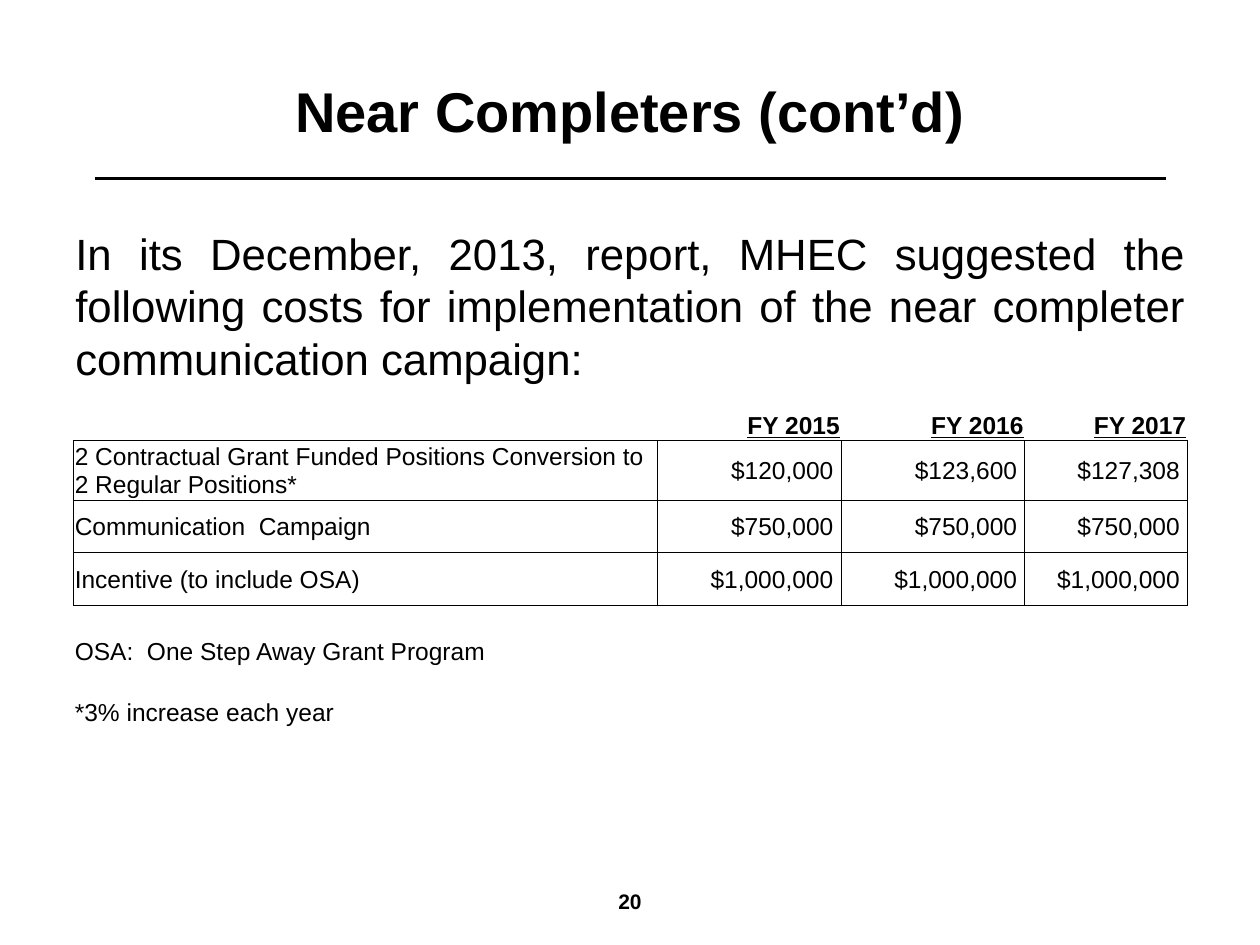
"""Build the Near Completers cost slide on a grid of 120 columns by 90 rows."""
from dataclasses import dataclass

from lxml.etree import SubElement
from pptx import Presentation
from pptx.dml.color import RGBColor
from pptx.enum.shapes import MSO_CONNECTOR as Connector
from pptx.enum.text import MSO_ANCHOR as Anchor, PP_ALIGN as Align
from pptx.oxml import parse_xml
from pptx.oxml.ns import nsdecls, qn
from pptx.util import Inches, Pt


@dataclass(frozen=True)
class Theme:
    font: str = "Arial"
    ink: str = "000000"
    title: int = 32
    body: int = 25
    table: int = 14
    number: int = 12
    rule: float = 1.5
    border: float = 0.5


THEME = Theme()
WIDTH, HEIGHT = Inches(10), Inches(7.5)
GRID_COLUMNS, GRID_ROWS = 120, 90

TEXTS = [
    ("Near Completers (cont’d)", (9, 4, 102, 13), THEME.title, True, Align.CENTER, Anchor.MIDDLE),
    ("In its December, 2013, report, MHEC suggested the following costs for "
     "implementation of the near completer communication campaign:",
     (6, 21, 108, 59.4), THEME.body, False, Align.JUSTIFY, Anchor.TOP),
    ("20", (41, 83.4, 38, 4.8), THEME.number, True, Align.CENTER, Anchor.MIDDLE),
]
RULE = (9, 17, 111, 17)

COSTS = [
    ("", "FY 2015", "FY 2016", "FY 2017"),
    ("2 Contractual Grant Funded Positions Conversion to 2 Regular Positions*",
     "$120,000", "$123,600", "$127,308"),
    ("Communication  Campaign", "$750,000", "$750,000", "$750,000"),
    ("Incentive (to include OSA)", "$1,000,000", "$1,000,000", "$1,000,000"),
    ("",) * 4,
    ("OSA:  One Step Away Grant Program", "", "", ""),
    ("",) * 4,
    ("*3% increase each year", "", "", ""),
]
TABLE_AT = (7, 39)
COLUMN_SPANS = (55.6, 17.5, 17.5, 15.5)
ROW_SPANS = (2.75, 5.35, 5, 5, 2.85, 2.65, 2.65, 2.65)
BOXED_ROWS = range(1, 4)


def across(columns):
    return round(WIDTH * columns / GRID_COLUMNS)


def down(rows):
    return round(HEIGHT * rows / GRID_ROWS)


def add_span(para, text, size, bold=False, underline=False):
    span = para.add_run()
    span.text = text
    font = span.font
    font.name, font.size, font.bold, font.underline = THEME.font, Pt(size), bold, underline
    font.color.rgb = RGBColor.from_string(THEME.ink)


def add_text(page, text, place, size, bold, align, anchor):
    left, top, width, height = place
    box = page.shapes.add_textbox(across(left), down(top), across(width), down(height))
    frame = box.text_frame
    frame.word_wrap = True
    frame.vertical_anchor = anchor
    para = frame.paragraphs[0]
    para.alignment = align
    add_span(para, text, size, bold)


def add_rule(page):
    left, top, right, bottom = RULE
    rule = page.shapes.add_connector(
        Connector.STRAIGHT, across(left), down(top), across(right), down(bottom))
    rule.line.color.rgb = RGBColor.from_string(THEME.ink)
    rule.line.width = Pt(THEME.rule)
    SubElement(rule._element.spPr, qn("a:effectLst"))


def set_borders(cell, row):
    boxed = row in BOXED_ROWS
    edges = {"L": boxed, "R": boxed,
             "T": boxed or row - 1 in BOXED_ROWS,
             "B": boxed or row + 1 in BOXED_ROWS}
    solid = f'<a:solidFill><a:srgbClr val="{THEME.ink}"/></a:solidFill>'
    for index, (side, drawn) in enumerate(edges.items()):
        paint = solid if drawn else "<a:noFill/>"
        line = parse_xml(
            f'<a:ln{side} {nsdecls("a")} w="{Pt(THEME.border)}">{paint}</a:ln{side}>')
        cell._tc.get_or_add_tcPr().insert(index, line)


def fill_cell(cell, text, row, column):
    header, amount = row == 0, column > 0
    cell.fill.background()
    cell.margin_left = cell.margin_top = cell.margin_right = Inches(0.01)
    cell.margin_bottom = 0
    if amount and row in BOXED_ROWS:
        cell.margin_right = Inches(0.06)
    cell.vertical_anchor = Anchor.BOTTOM if header else Anchor.MIDDLE
    para = cell.text_frame.paragraphs[0]
    para.alignment = Align.RIGHT if amount else Align.LEFT
    if text:
        add_span(para, text, THEME.table, header, header)
    else:
        SubElement(para._p, qn("a:endParaRPr"), sz=str(THEME.table * 100))
    set_borders(cell, row)


def add_costs(page):
    left, top = TABLE_AT
    frame = page.shapes.add_table(
        len(COSTS), len(COLUMN_SPANS), across(left), down(top),
        across(sum(COLUMN_SPANS)), down(sum(ROW_SPANS)))
    table = frame.table
    table.first_row = table.horz_banding = False
    for column, span in zip(table.columns, COLUMN_SPANS):
        column.width = across(span)
    for row, span in zip(table.rows, ROW_SPANS):
        row.height = down(span)
    for row, values in enumerate(COSTS):
        for column, text in enumerate(values):
            fill_cell(table.cell(row, column), text, row, column)


def main():
    deck = Presentation()
    deck.slide_width, deck.slide_height = WIDTH, HEIGHT
    page = deck.slides.add_slide(deck.slide_layouts[6])
    add_rule(page)
    for text in TEXTS:
        add_text(page, *text)
    add_costs(page)
    deck.save("out.pptx")


if __name__ == "__main__":
    main()
